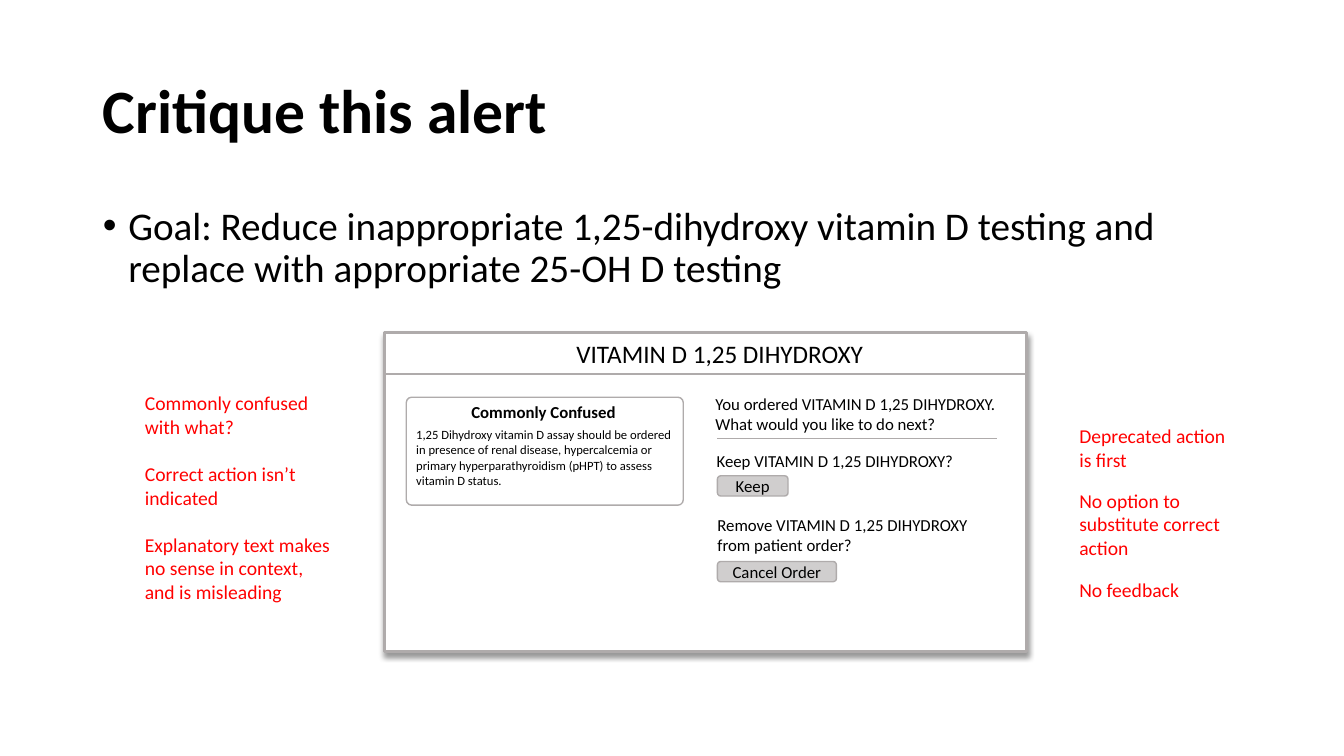
from dataclasses import dataclass

from lxml import etree
from pptx import Presentation
from pptx.dml.color import RGBColor
from pptx.enum.shapes import MSO_CONNECTOR, MSO_SHAPE as Shape
from pptx.enum.text import MSO_ANCHOR as Anchor, MSO_AUTO_SIZE as AutoSize, PP_ALIGN as Align
from pptx.oxml.ns import qn
from pptx.util import Cm, Pt


@dataclass(frozen=True)
class Theme:
    font: str = "Calibri"
    text: str = "000000"
    critique: str = "FF0000"
    paper: str = "FFFFFF"
    border: str = "AFABAB"
    button: str = "D0CECE"
    title_size: int = 44
    body_size: int = 28
    heading_size: int = 18
    note_size: int = 14
    alert_size: int = 12
    detail_size: int = 9


THEME = Theme()

# Content; boxes are (left, top, width, height) in centimetres
TITLE = "Critique this alert"
GOAL = ("Goal: Reduce inappropriate 1,25-dihydroxy vitamin D testing "
        "and replace with appropriate 25-OH D testing")
ALERT_HEADING = "VITAMIN D 1,25 DIHYDROXY"
CARD_TITLE = "Commonly Confused"
CARD_TEXT = ("1,25 Dihydroxy vitamin D assay should be ordered in presence of renal "
             "disease, hypercalcemia or primary hyperparathyroidism (pHPT) to assess "
             "vitamin D status.")
PROMPTS = [
    ("You ordered VITAMIN D 1,25 DIHYDROXY. What would you like to do next?",
     (17.78, 9.8, 7.62, 1.27)),
    ("Keep VITAMIN D 1,25 DIHYDROXY?", (17.81, 11.23, 7.62, 0.76)),
    ("Remove VITAMIN D 1,25 DIHYDROXY from patient order?", (17.83, 12.85, 7.62, 1.27)),
]
BUTTONS = [
    ("Keep", (18.08, 11.99, 1.78, 0.51)),
    ("Cancel Order", (18.08, 14.15, 3, 0.51)),
]
LEFT_NOTES = [
    "Commonly confused with what?",
    "Correct action isn’t indicated",
    "Explanatory text makes no sense in context, and is misleading",
]
RIGHT_NOTES = [
    ("Deprecated action is first", (26.95, 10.57, 4.6, 1.45)),
    ("No option to substitute correct action", (26.95, 12.19, 4.6, 2.06)),
    ("No feedback", (26.95, 14.43, 4.6, 0.86)),
]

TITLE_BOX = (2.34, 1.02, 29.21, 3.68)
GOAL_BOX = (2.34, 5.08, 29.21, 2.51)
ALERT_BOX = (9.7, 8.38, 16.18, 8.03)
BAR_BOX = (9.7, 8.41, 16.18, 1.02)
HEADING_BOX = (14.1, 8.41, 8.08, 1.02)
CARD_BOX = (10.24, 10.01, 6.98, 2.72)
CARD_TITLE_BOX = (11.25, 10.01, 4.9, 0.76)
CARD_TEXT_BOX = (10.24, 10.64, 6.98, 1.8)
LEFT_NOTES_BOX = (3.4, 9.73, 5.26, 5.64)
RULE_X, RULE_Y = (18.08, 25.12), 11.05
NOTE_GAP = 17


def rgb(code):
    return RGBColor.from_string(code)


def write(tf, lines, size, color=THEME.text, bold=False, align=Align.LEFT, gap=0):
    """Fill a text frame, one paragraph per line, with gap points between them."""
    tf.word_wrap = True
    tf.auto_size = AutoSize.NONE
    for i, line in enumerate(lines):
        p = tf.add_paragraph() if i else tf.paragraphs[0]
        p.alignment = align
        p.space_before = Pt(gap if i else 0)
        r = p.add_run()
        r.text = line
        r.font.name = THEME.font
        r.font.size = Pt(size)
        r.font.bold = bold
        r.font.color.rgb = rgb(color)


def fill_placeholder(sp, box, text, size, anchor, bold=False):
    sp.left, sp.top, sp.width, sp.height = map(Cm, box)
    write(sp.text_frame, [text], size, bold=bold)
    sp.text_frame.vertical_anchor = anchor
    p = sp.text_frame.paragraphs[0]
    p.line_spacing = 0.9
    return p


def add_bullet(p):
    pPr = p._p.get_or_add_pPr()
    pPr.set("marL", str(Cm(0.64)))
    pPr.set("indent", str(-Cm(0.64)))
    etree.SubElement(pPr, qn("a:buFont"), typeface="Arial")
    etree.SubElement(pPr, qn("a:buChar"), char="•")


def add_text(s, box, lines, size, **style):
    tb = s.shapes.add_textbox(*map(Cm, box))
    write(tb.text_frame, lines, size, **style)


def add_panel(s, kind, box, fill=None, width=1):
    sp = s.shapes.add_shape(kind, *map(Cm, box))
    sp.shadow.inherit = False
    if fill:
        sp.fill.solid()
        sp.fill.fore_color.rgb = rgb(fill)
    else:
        sp.fill.background()
    sp.line.color.rgb = rgb(THEME.border)
    sp.line.width = Pt(width)
    return sp


def add_drop_shadow(sp):
    effects = sp._element.spPr.find(qn("a:effectLst"))
    shadow = etree.SubElement(effects, qn("a:outerShdw"), blurRad=str(Pt(4)),
                              dist=str(Pt(3)), dir="5400000", algn="t", rotWithShape="0")
    color = etree.SubElement(shadow, qn("a:srgbClr"), val="000000")
    etree.SubElement(color, qn("a:alpha"), val="40000")


def add_rule(s):
    left, right = RULE_X
    rule = s.shapes.add_connector(MSO_CONNECTOR.STRAIGHT, Cm(left), Cm(RULE_Y),
                                  Cm(right), Cm(RULE_Y))
    rule.line.color.rgb = rgb(THEME.border)
    rule.line.width = Pt(0.5)
    etree.SubElement(rule._element.spPr, qn("a:effectLst"))


def add_alert(s):
    add_drop_shadow(add_panel(s, Shape.RECTANGLE, ALERT_BOX, THEME.paper, 2.25))
    add_text(s, HEADING_BOX, [ALERT_HEADING], THEME.heading_size, align=Align.CENTER)
    add_panel(s, Shape.RECTANGLE, BAR_BOX)

    add_text(s, CARD_TITLE_BOX, [CARD_TITLE], THEME.alert_size, bold=True, align=Align.CENTER)
    add_text(s, CARD_TEXT_BOX, [CARD_TEXT], THEME.detail_size)
    add_panel(s, Shape.ROUNDED_RECTANGLE, CARD_BOX).adjustments[0] = 0.05

    for text, box in PROMPTS:
        add_text(s, box, [text], THEME.alert_size)
    add_rule(s)
    for label, box in BUTTONS:
        button = add_panel(s, Shape.ROUNDED_RECTANGLE, box, THEME.button)
        write(button.text_frame, [label], THEME.alert_size, align=Align.CENTER)
        button.text_frame.vertical_anchor = Anchor.MIDDLE


def main():
    prs = Presentation()
    prs.slide_width, prs.slide_height = Cm(33.87), Cm(19.05)
    s = prs.slides.add_slide(prs.slide_layouts[1])

    fill_placeholder(s.shapes.title, TITLE_BOX, TITLE, THEME.title_size, Anchor.MIDDLE, bold=True)
    goal = fill_placeholder(s.placeholders[1], GOAL_BOX, GOAL, THEME.body_size, Anchor.TOP)
    goal.space_before = Pt(10)
    add_bullet(goal)

    add_alert(s)
    add_text(s, LEFT_NOTES_BOX, LEFT_NOTES, THEME.note_size, color=THEME.critique, gap=NOTE_GAP)
    for note, box in RIGHT_NOTES:
        add_text(s, box, [note], THEME.note_size, color=THEME.critique)
    prs.save("out.pptx")


if __name__ == "__main__":
    main()
